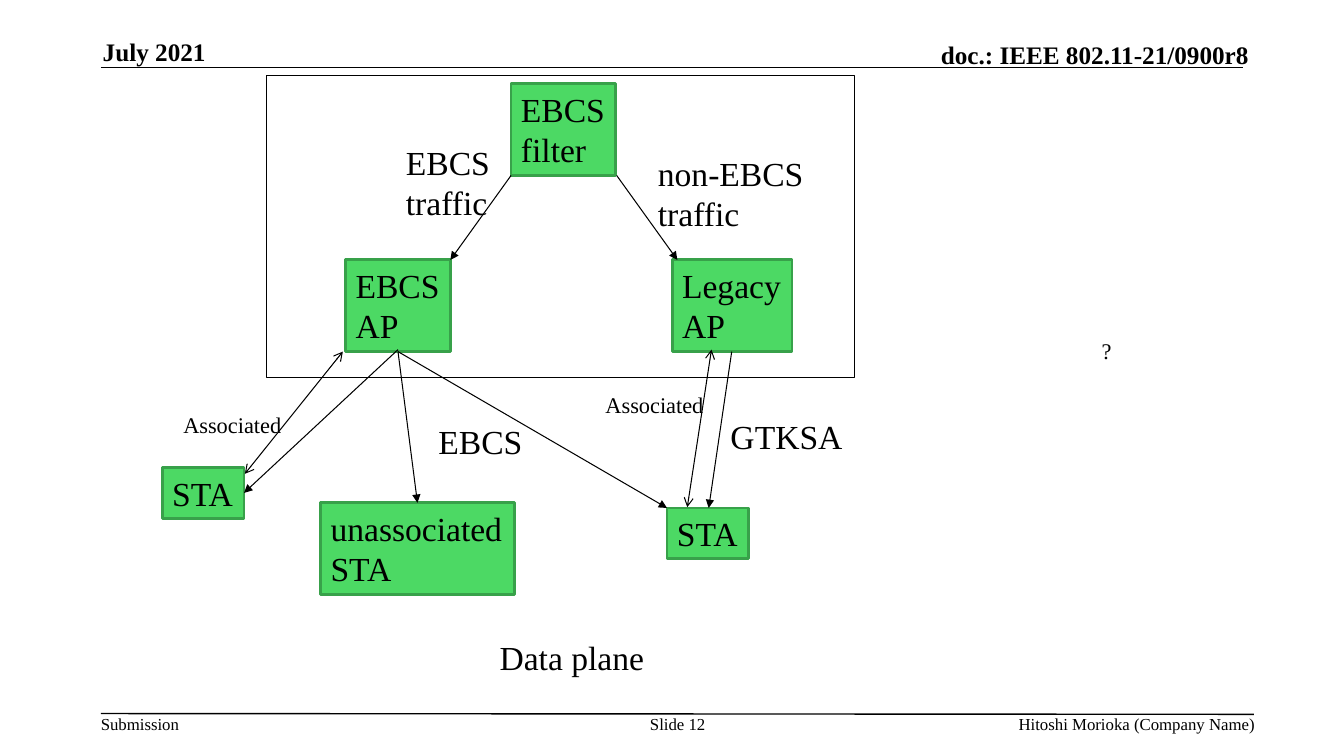
from dataclasses import dataclass

from lxml.etree import SubElement
from pptx import Presentation
from pptx.dml.color import RGBColor
from pptx.enum.shapes import MSO_CONNECTOR, MSO_SHAPE
from pptx.enum.text import MSO_ANCHOR, PP_ALIGN
from pptx.oxml.ns import qn
from pptx.util import Cm, Pt


@dataclass
class Theme:
    font: str = "Times New Roman"
    ink: RGBColor = RGBColor(0x00, 0x00, 0x00)
    green: RGBColor = RGBColor(0x4C, 0xD9, 0x64)
    green_edge: RGBColor = RGBColor(0x38, 0xA1, 0x4A)
    large: Pt = Pt(24)
    header: Pt = Pt(18)
    small: Pt = Pt(16)
    footer: Pt = Pt(12)
    box_edge: Pt = Pt(2)
    rule: Pt = Pt(1)
    thin: Pt = Pt(0.75)


theme = Theme()
deck = Presentation()
deck.slide_width, deck.slide_height = Cm(33.87), Cm(19.05)
page = deck.slides.add_slide(deck.slide_layouts[6])


def write(shape, text, size, bold=False, align=PP_ALIGN.LEFT):
    frame = shape.text_frame
    frame.text = text
    frame.word_wrap = False
    frame.vertical_anchor = MSO_ANCHOR.TOP
    for para in frame.paragraphs:
        para.alignment = align
        para.font.name = theme.font
        para.font.size = size
        para.font.bold = bold
        para.font.color.rgb = theme.ink
    return frame


def draw_line(start, end, width, head=None, tail=None):
    line = page.shapes.add_connector(
        MSO_CONNECTOR.STRAIGHT, *(Cm(value) for value in start + end))
    line.line.color.rgb = theme.ink
    line.line.width = width
    outline = line.line._get_or_add_ln()
    for tag, kind in (("a:headEnd", head), ("a:tailEnd", tail)):
        if kind:
            SubElement(outline, qn(tag), type=kind)
    SubElement(line._element.spPr, qn("a:effectLst"))


# Header and footer rules
draw_line((2.54, 1.7), (31.32, 1.7), theme.rule)
draw_line((2.54, 17.98), (31.6, 18), theme.rule)

# Header and footer texts
for text, left, top, width, height, size, align in (
    ("July 2021", 2.59, 0.91, 6.93, 0.76, theme.header, PP_ALIGN.LEFT),
    ("doc.: IEEE 802.11-21/0900r8", 18.52, 0.99, 12.95, 0.76, theme.header, PP_ALIGN.RIGHT),
    ("Submission", 2.54, 17.98, 2.01, 0.51, theme.footer, PP_ALIGN.LEFT),
    ("Slide 12", 16.1, 17.98, 1.96, 1.02, theme.footer, PP_ALIGN.CENTER),
    ("Hitoshi Morioka (Company Name)", 19.84, 17.98, 11.79, 0.51, theme.footer, PP_ALIGN.RIGHT),
):
    box = page.shapes.add_textbox(Cm(left), Cm(top), Cm(width), Cm(height))
    in_header = size == theme.header
    frame = write(box, text, size, in_header, align)
    frame.word_wrap = True
    frame.margin_left = frame.margin_right = frame.margin_top = frame.margin_bottom = 0
    if in_header:
        frame.vertical_anchor = MSO_ANCHOR.BOTTOM

# Frame around the filter and the two access points
enclosure = page.shapes.add_shape(
    MSO_SHAPE.RECTANGLE, Cm(6.71), Cm(1.9), Cm(14.83), Cm(7.62))
enclosure.shadow.inherit = False
enclosure.fill.background()
enclosure.line.color.rgb = theme.ink
enclosure.line.width = theme.thin

# Network nodes: one or two lines of text set the height
heights = {1: 1.27, 2: 2.31}
for text, left, top, width in (
    ("EBCS\nfilter", 12.88, 2.11, 2.64),
    ("EBCS\nAP", 8.71, 6.55, 2.64),
    ("Legacy\nAP", 16.94, 6.55, 3.02),
    ("STA", 4.09, 11.79, 2.06),
    ("unassociated\nSTA", 8.08, 12.67, 4.88),
    ("STA", 16.81, 12.8, 2.06),
):
    height = heights[len(text.splitlines())]
    node = page.shapes.add_shape(
        MSO_SHAPE.RECTANGLE, Cm(left), Cm(top), Cm(width), Cm(height))
    node.shadow.inherit = False
    node.fill.solid()
    node.fill.fore_color.rgb = theme.green
    node.line.color.rgb = theme.green_edge
    node.line.width = theme.box_edge
    write(node, text, theme.large)

# Traffic arrows
for start, end in (
    ((12.88, 4.42), (11.35, 6.55)),
    ((15.54, 4.42), (17.07, 6.55)),
    ((18.44, 8.86), (17.86, 12.8)),
    ((10.03, 8.86), (16.81, 12.8)),
    ((10.03, 8.86), (10.52, 12.67)),
    ((10.03, 8.81), (6.15, 12.42)),
):
    draw_line(start, end, theme.thin, tail="triangle")

# Two-way association arrows
for start, end in (
    ((17.93, 8.81), (17.32, 12.78)),
    ((8.64, 8.86), (6.17, 11.94)),
):
    draw_line(start, end, theme.thin, head="arrow", tail="arrow")

# Labels
for text, left, top, width, size in (
    ("EBCS\ntraffic", 9.98, 3.45, 2.64, theme.large),
    ("non-EBCS\ntraffic", 16.33, 3.73, 4.22, theme.large),
    ("EBCS", 10.8, 10.49, 2.64, theme.large),
    ("GTKSA", 18.16, 10.36, 3.38, theme.large),
    ("Data plane", 12.34, 15.93, 4.19, theme.large),
    ("Associated", 4.37, 10.24, 3.02, theme.small),
    ("Associated", 15.01, 9.73, 3.02, theme.small),
    ("?", 27.51, 8.38, 0.76, theme.small),
):
    height = heights[len(text.splitlines())] if size == theme.large else 0.94
    label = page.shapes.add_textbox(Cm(left), Cm(top), Cm(width), Cm(height))
    write(label, text, size)

deck.save("out.pptx")
